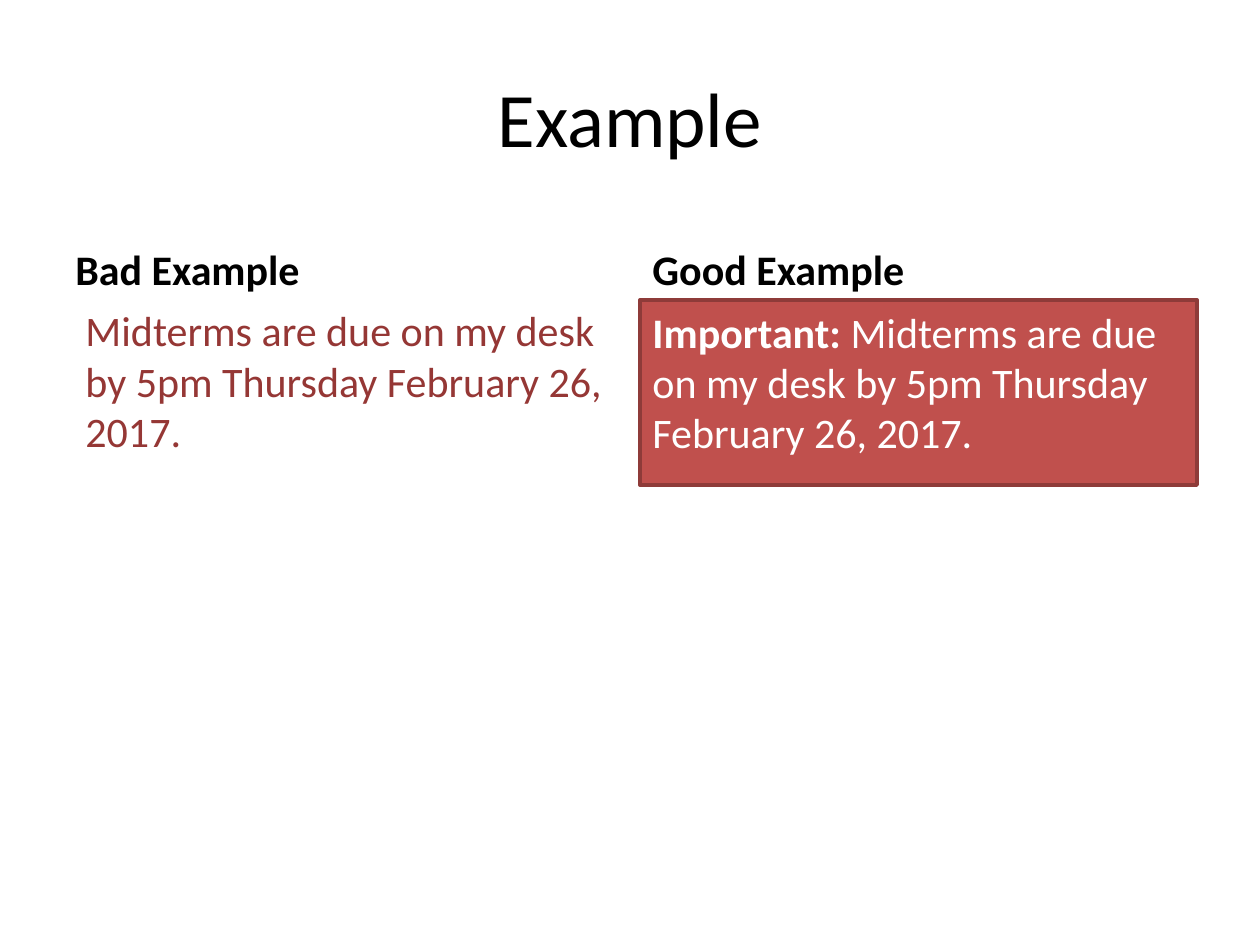
from dataclasses import dataclass
from pptx import Presentation
from pptx.dml.color import RGBColor
from pptx.enum.shapes import MSO_SHAPE
from pptx.enum.text import MSO_ANCHOR, PP_ALIGN
from pptx.util import Inches, Pt


@dataclass(frozen=True)
class Theme:
    font: str = "Calibri"
    title_size: int = 44
    body_size: int = 24
    black: str = "000000"
    white: str = "FFFFFF"
    red: str = "C0504D"
    border: str = "8E3B39"
    dark_red: str = "953735"


theme = Theme()
presentation = Presentation()
presentation.slide_width = Inches(10)
presentation.slide_height = Inches(7.5)
slide = presentation.slides.add_slide(presentation.slide_layouts[6])

margin = 0.5
column_width = 4.42
left_column = margin
right_column = 10 - margin - column_width
heading_top = 1.68
heading_height = 0.7
body_top = heading_top + heading_height
message = "Midterms are due on my desk by 5pm Thursday February 26, 2017."


def write(shape, runs, size, color, anchor, alignment=PP_ALIGN.LEFT):
    frame = shape.text_frame
    frame.word_wrap = True
    frame.vertical_anchor = anchor
    paragraph = frame.paragraphs[0]
    paragraph.alignment = alignment
    for text, bold in runs:
        run = paragraph.add_run()
        run.text = text
        run.font.name = theme.font
        run.font.size = Pt(size)
        run.font.bold = bold
        run.font.color.rgb = RGBColor.from_string(color)


title = slide.shapes.add_textbox(Inches(margin), Inches(0.3), Inches(10 - 2 * margin), Inches(1.25))
write(title, [("Example", False)], theme.title_size, theme.black, MSO_ANCHOR.MIDDLE, PP_ALIGN.CENTER)

for left, text in ((left_column, "Bad Example"), (right_column, "Good Example")):
    heading = slide.shapes.add_textbox(
        Inches(left), Inches(heading_top), Inches(column_width), Inches(heading_height)
    )
    write(heading, [(text, True)], theme.body_size, theme.black, MSO_ANCHOR.BOTTOM)

examples = (
    (right_column, body_top, 1.47, theme.red, theme.border, theme.white,
     [("Important: ", True), (message, False)]),
    (left_column + 0.08, body_top - 0.01, 1.88, theme.white, None, theme.dark_red,
     [(message, False)]),
)
for left, top, height, fill, border, color, runs in examples:
    example = slide.shapes.add_shape(
        MSO_SHAPE.RECTANGLE, Inches(left), Inches(top), Inches(column_width), Inches(height)
    )
    example.shadow.inherit = False
    example.fill.solid()
    example.fill.fore_color.rgb = RGBColor.from_string(fill)
    if border:
        example.line.color.rgb = RGBColor.from_string(border)
        example.line.width = Pt(2)
    else:
        example.line.fill.background()
    write(example, runs, theme.body_size, color, MSO_ANCHOR.TOP)

presentation.save("out.pptx")
